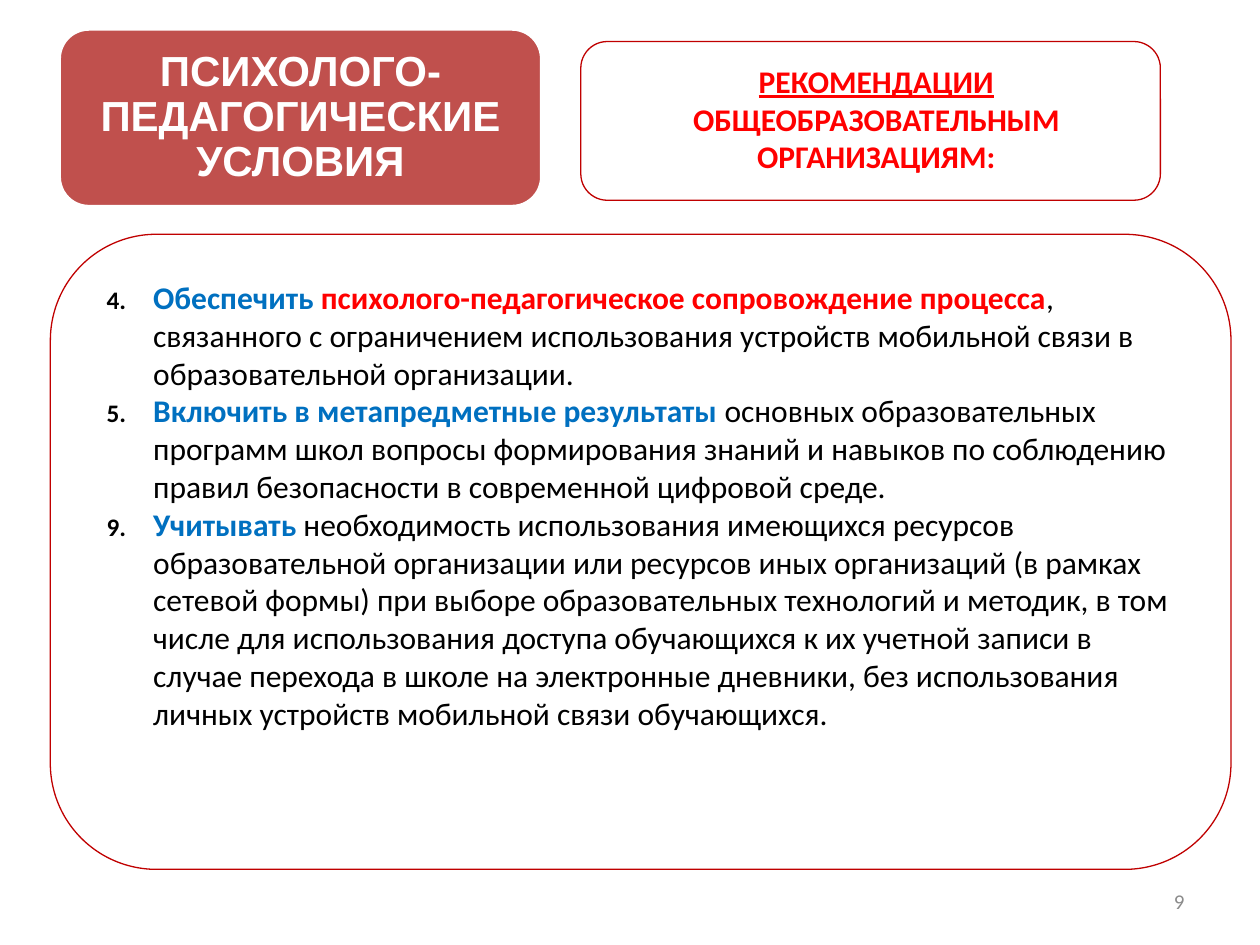
import pptx
import pptx.dml.color
import pptx.enum.shapes
import pptx.enum.text
import pptx.oxml
import pptx.oxml.ns
import pptx.util
from lxml import etree

RGBColor = pptx.dml.color.RGBColor
Align = pptx.enum.text.PP_ALIGN
Anchor = pptx.enum.text.MSO_ANCHOR
Inches = pptx.util.Inches
Pt = pptx.util.Pt

WHITE = RGBColor(0xFF, 0xFF, 0xFF)
BLACK = RGBColor(0x00, 0x00, 0x00)
RED = RGBColor(0xFF, 0x00, 0x00)
BLUE = RGBColor(0x00, 0x70, 0xC0)
BRICK = RGBColor(0xC0, 0x50, 0x4D)
OUTLINE = RGBColor(0xC0, 0x00, 0x00)
GREY = RGBColor(0x8B, 0x8B, 0x8B)

# Each item: its number and its spans as (text, colour, bold).
RECOMMENDATIONS = [
    (4, [("Обеспечить ", BLUE, True),
         ("психолого-педагогическое сопровождение процесса", RED, True),
         (", связанного с ограничением использования устройств мобильной связи "
          "в образовательной организации.", BLACK, False)]),
    (5, [("Включить в метапредметные результаты ", BLUE, True),
         ("основных образовательных программ школ вопросы формирования знаний "
          "и навыков по соблюдению правил безопасности в современной цифровой "
          "среде.", BLACK, False)]),
    (9, [("Учитывать", BLUE, True),
         (" необходимость использования имеющихся ресурсов образовательной "
          "организации или ресурсов иных организаций (в рамках сетевой формы) "
          "при выборе образовательных технологий и методик, в том числе для "
          "использования доступа обучающихся к их учетной записи в случае "
          "перехода в школе на электронные дневники, без использования личных "
          "устройств мобильной связи обучающихся.", BLACK, False)]),
]


class SlideBuilder:
    """Style and current slide; positions are in columns and rows of one inch."""

    def __init__(self, deck):
        self.page = deck.slides.add_slide(deck.slide_layouts[5])
        self.column = deck.slide_width / 10
        self.row = deck.slide_height / 7.5
        self.font = "Calibri"
        self.size = 18

    def area(self, left, top, width, height):
        return (round(left * self.column), round(top * self.row),
                round(width * self.column), round(height * self.row))

    def set_frame(self, frame, insets, anchor):
        frame.word_wrap = True
        frame.auto_size = pptx.enum.text.MSO_AUTO_SIZE.NONE
        frame.vertical_anchor = anchor
        (frame.margin_left, frame.margin_top,
         frame.margin_right, frame.margin_bottom) = map(Inches, insets)

    def add_span(self, para, text, color, bold=False, size=None, font=None):
        span = para.add_run()
        span.text = text
        span.font.name = font or self.font
        span.font.size = Pt(size or self.size)
        span.font.bold = bold
        span.font.color.rgb = color
        return span

    def card(self, place, fill, line, line_width):
        box = self.page.shapes.add_shape(
            pptx.enum.shapes.MSO_SHAPE.ROUNDED_RECTANGLE, *self.area(*place))
        box.shadow.inherit = False
        box.adjustments[0] = 0.167
        box.fill.solid()
        box.fill.fore_color.rgb = fill
        box.line.color.rgb = line
        box.line.width = Pt(line_width)
        return box

    def outlined_card(self, place):
        box = self.card(place, WHITE, OUTLINE, 0.75)
        self.set_frame(box.text_frame, (0.06, 0.1, 0.1, 0.05), Anchor.TOP)
        return box.text_frame

    def title(self, text, place, padding):
        left, top, width, height = place
        box = self.card(place, BRICK, WHITE, 2)
        title = self.page.shapes.title
        title.left, title.top, title.width, title.height = self.area(
            left + padding, top + padding, width - 2 * padding, height - 2 * padding)
        self.set_frame(title.text_frame, (0.01,) * 4, Anchor.MIDDLE)
        para = title.text_frame.paragraphs[0]
        para.alignment = Align.CENTER
        para.line_spacing = 0.9
        para.space_after = Pt(8.4)
        self.add_span(para, text, WHITE, True, 24, "Arial")
        box._element.addnext(title._element)  # the title lies on its card

    def indent(self, para, margin, first_line=0):
        properties = para._p.get_or_add_pPr()
        properties.set("marL", str(Inches(margin)))
        properties.set("indent", str(Inches(first_line)))
        return properties

    def number(self, para, start):
        """Give the paragraph a hanging black number at 80 % of the text size."""
        properties = self.indent(para, 0.51, -0.37)

        def add(parent, tag, **attributes):
            return etree.SubElement(parent, pptx.oxml.ns.qn(tag), attributes)

        add(add(properties, "a:buClr"), "a:srgbClr", val=str(BLACK))
        add(properties, "a:buSzPct", val="80000")
        add(properties, "a:buAutoNum", type="arabicPeriod", startAt=str(start))

    def heading(self, underlined, rest, place):
        para = self.outlined_card(place).paragraphs[0]
        para.alignment = Align.CENTER
        self.indent(para, 0.13)
        self.add_span(para, underlined, RED, True).font.underline = True
        self.add_span(para, rest, RED, True)

    def numbered_list(self, items, place):
        frame = self.outlined_card(place)
        for index, (start, spans) in enumerate(items):
            para = frame.add_paragraph() if index else frame.paragraphs[0]
            para.alignment = Align.LEFT
            self.number(para, start)
            for text, color, bold in spans:
                self.add_span(para, text, color, bold)

    def page_number(self, text, place):
        box = self.page.shapes.add_textbox(*self.area(*place))
        self.set_frame(box.text_frame, (0.1, 0.05, 0.1, 0.05), Anchor.MIDDLE)
        para = box.text_frame.paragraphs[0]
        para.alignment = Align.RIGHT
        self.add_span(para, text, GREY, size=12)


def main():
    deck = pptx.Presentation()
    deck.slide_width, deck.slide_height = Inches(10), Inches(7.5)
    builder = SlideBuilder(deck)
    builder.page_number("9", (7.17, 6.95, 2.33, 0.4))
    builder.heading("РЕКОМЕНДАЦИИ", " ОБЩЕОБРАЗОВАТЕЛЬНЫМ ОРГАНИЗАЦИЯМ:",
                    (4.61, 0.33, 4.6, 1.26))
    builder.numbered_list(RECOMMENDATIONS, (0.4, 1.86, 9.37, 5.04))
    builder.title("ПСИХОЛОГО-ПЕДАГОГИЧЕСКИЕ УСЛОВИЯ", (0.47, 0.23, 3.83, 1.41), 0.07)
    deck.save("out.pptx")


if __name__ == "__main__":
    main()
